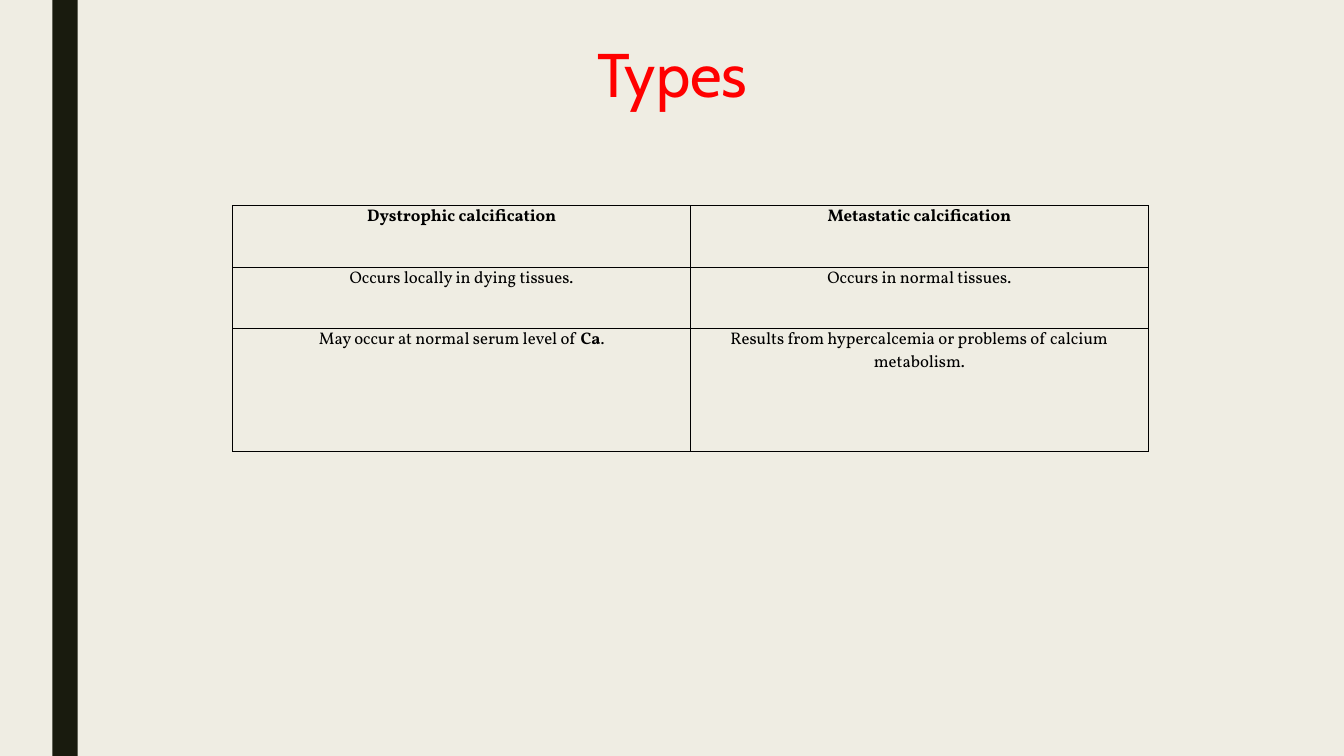
from lxml.etree import SubElement
from pptx import Presentation
from pptx.dml.color import RGBColor
from pptx.enum.shapes import MSO_SHAPE
from pptx.enum.text import MSO_ANCHOR, MSO_AUTO_SIZE, PP_ALIGN
from pptx.oxml.ns import qn
from pptx.util import Inches, Pt

COLOURS = {
    "background": "EFEDE3",
    "bar": "191B0E",
    "title": "FF0000",
    "ink": "000000",
}
ROW_HEIGHTS = [0.61, 0.61, 1.22]
COLUMN_WIDTH = 4.54
CALCIFICATION_TYPES = [
    [[("Dystrophic calcification", True)], [("Metastatic calcification", True)]],
    [
        [("Occurs locally in dying tissues.", False)],
        [("Occurs in normal tissues.", False)],
    ],
    [
        [("May occur at normal serum level of ", False), ("Ca", True), (".", False)],
        [("Results from hypercalcemia or problems of calcium metabolism.", False)],
    ],
]


def colour(name):
    return RGBColor.from_string(COLOURS[name])


def set_font(font, name, size, ink):
    font.name = name
    font.size = Pt(size)
    font.color.rgb = colour(ink)


def add_side_bar(page):
    bar = page.shapes.add_shape(
        MSO_SHAPE.RECTANGLE, Inches(0.52), 0, Inches(0.25), Inches(7.5)
    )
    bar.shadow.inherit = False
    bar.fill.solid()
    bar.fill.fore_color.rgb = colour("bar")
    bar.line.fill.background()


def set_title(page, text):
    title = page.shapes.title
    title.left, title.top = Inches(0.92), Inches(0.4)
    title.width, title.height = Inches(11.5), Inches(0.91)
    frame = title.text_frame
    frame.text = text
    frame.auto_size = MSO_AUTO_SIZE.NONE
    frame.vertical_anchor = MSO_ANCHOR.TOP
    para = frame.paragraphs[0]
    para.alignment = PP_ALIGN.CENTER
    para.line_spacing = 0.89
    set_font(para.font, "Cabin", 44, "title")


def add_borders(cell):
    properties = cell._tc.get_or_add_tcPr()
    for side in ("a:lnL", "a:lnR", "a:lnT", "a:lnB"):
        line = SubElement(properties, qn(side), w=str(Pt(1)))
        fill = SubElement(line, qn("a:solidFill"))
        SubElement(fill, qn("a:srgbClr"), val=COLOURS["ink"])


def fill_cell(cell, spans):
    add_borders(cell)
    cell.fill.background()
    cell.margin_left = cell.margin_right = Inches(0.07)
    cell.margin_top = cell.margin_bottom = 0
    para = cell.text_frame.paragraphs[0]
    para.alignment = PP_ALIGN.CENTER
    set_font(para.font, "Vollkorn", 12, "ink")
    for text, bold in spans:
        span = para.add_run()
        span.text = text
        span.font.bold = bold


def add_types_table(page):
    table = page.shapes.add_table(
        len(CALCIFICATION_TYPES),
        2,
        Inches(2.31),
        Inches(2.04),
        Inches(2 * COLUMN_WIDTH),
        Inches(sum(ROW_HEIGHTS)),
    ).table
    table.horz_banding = False
    for column in table.columns:
        column.width = Inches(COLUMN_WIDTH)
    for row, height, contents in zip(table.rows, ROW_HEIGHTS, CALCIFICATION_TYPES):
        row.height = Inches(height)
        for cell, spans in zip(row.cells, contents):
            fill_cell(cell, spans)


def main():
    deck = Presentation()
    deck.slide_width, deck.slide_height = Inches(13.33), Inches(7.5)
    page = deck.slides.add_slide(deck.slide_layouts[5])
    page.background.fill.solid()
    page.background.fill.fore_color.rgb = colour("background")
    add_side_bar(page)
    set_title(page, "Types")
    add_types_table(page)
    deck.save("out.pptx")


if __name__ == "__main__":
    main()
